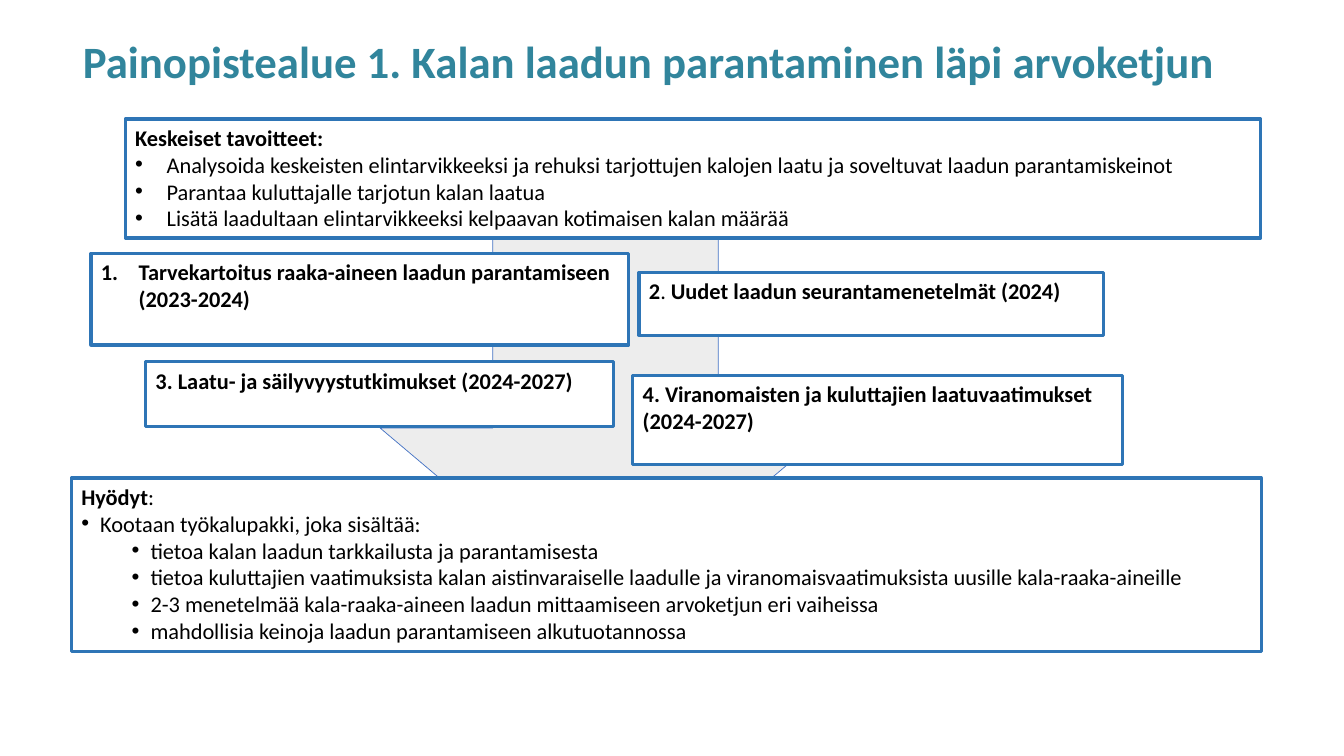
from lxml.etree import SubElement
from pptx import Presentation
from pptx.dml.color import RGBColor
from pptx.enum.shapes import MSO_SHAPE
from pptx.enum.text import MSO_ANCHOR, MSO_AUTO_SIZE, PP_ALIGN
from pptx.oxml.ns import qn
from pptx.util import Pt

TITLE = "Painopistealue 1. Kalan laadun parantaminen läpi arvoketjun"
FONT = "Calibri"
TEAL, BLUE, ARROW_BLUE = "31859C", "2E75B6", "4472C4"
GREY, WHITE, BLACK = "EDEDED", "FFFFFF", "000000"

# Paragraph style: (list marker, left indent)(hanging indent)
PLAIN = (None, 0, 0)
NUMBER = ("1.", 27, 27)
GOAL = ("•", 22.5, 22.5)
BENEFIT = ("•", 13.5, 13.5)
TOOL = ("•", 49.5, 13.5)

# Box: (left, top, width, height), paragraphs of (style, [(text, bold), ...])
BOXES = [
    ((65, 181, 384, 65.5), [
        (NUMBER, [("Tarvekartoitus raaka-aineen laadun parantamiseen (2023-2024)", True)]),
    ]),
    ((456.5, 194.5, 332, 45), [
        (PLAIN, [("2", True), (". ", False),
                 ("Uudet laadun seurantamenetelmät (2024)", True)]),
    ]),
    ((104, 258.5, 334.5, 46), [
        (PLAIN, [("3. Laatu- ja säilyvyystutkimukset (2024-2027)", True)]),
    ]),
    ((51, 341.5, 850, 124), [
        (PLAIN, [("Hyödyt", True), (":", False)]),
        (BENEFIT, [("Kootaan työkalupakki, joka sisältää:", False)]),
        (TOOL, [("tietoa kalan laadun tarkkailusta ja parantamisesta", False)]),
        (TOOL, [("tietoa kuluttajien vaatimuksista kalan aistinvaraiselle laadulle ja "
                 "viranomaisvaatimuksista uusille kala-raaka-aineille", False)]),
        (TOOL, [("2-3 menetelmää kala-raaka-aineen laadun mittaamiseen arvoketjun "
                 "eri vaiheissa", False)]),
        (TOOL, [("mahdollisia keinoja laadun parantamiseen alkutuotannossa", False)]),
    ]),
    ((89.5, 85, 811, 85), [
        (PLAIN, [("Keskeiset tavoitteet:", True)]),
        (GOAL, [("Analysoida keskeisten elintarvikkeeksi ja rehuksi tarjottujen kalojen "
                 "laatu ja soveltuvat laadun parantamiskeinot", False)]),
        (GOAL, [("Parantaa kuluttajalle tarjotun kalan laatua", False)]),
        (GOAL, [("Lisätä laadultaan elintarvikkeeksi kelpaavan kotimaisen kalan määrää", False)]),
    ]),
    ((452, 268, 350, 64), [
        (PLAIN, [("4. Viranomaisten ja kuluttajien laatuvaatimukset (2024-2027)", True)]),
    ]),
]
ARROW = (271.5, 170, 322, 271.5)


def color(hex_string):
    return RGBColor.from_string(hex_string)


def add_shape(slide, kind, place, fill, line, line_width):
    shape = slide.shapes.add_shape(kind, *map(Pt, place))
    shape.shadow.inherit = False
    shape.fill.solid()
    shape.fill.fore_color.rgb = color(fill)
    shape.line.color.rgb = color(line)
    shape.line.width = Pt(line_width)
    return shape


def set_marker(paragraph, marker, left, hanging):
    properties = paragraph._p.get_or_add_pPr()
    properties.set("marL", str(Pt(left)))
    properties.set("indent", str(-Pt(hanging)))
    if marker == "1.":
        SubElement(properties, qn("a:buAutoNum"), type="arabicPeriod")
    else:
        SubElement(properties, qn("a:buFont"), typeface="Arial")
        SubElement(properties, qn("a:buChar"), char=marker)


def add_box(slide, place, paragraphs):
    box = add_shape(slide, MSO_SHAPE.RECTANGLE, place, WHITE, BLUE, 2.25)
    frame = box.text_frame
    frame.word_wrap = True
    frame.auto_size = MSO_AUTO_SIZE.NONE
    frame.vertical_anchor = MSO_ANCHOR.TOP
    for index, (style, runs) in enumerate(paragraphs):
        paragraph = frame.add_paragraph() if index else frame.paragraphs[0]
        paragraph.alignment = PP_ALIGN.LEFT
        if style != PLAIN:
            set_marker(paragraph, *style)
        paragraph.font.name = FONT
        paragraph.font.size = Pt(16)
        paragraph.font.color.rgb = color(BLACK)
        for text, bold in runs:
            run = paragraph.add_run()
            run.text = text
            run.font.bold = bold


def add_title(slide):
    title = slide.shapes.title
    title.left, title.top, title.width, title.height = map(Pt, (52, 12, 869, 68))
    frame = title.text_frame
    frame.text = TITLE
    frame.word_wrap = True
    frame.auto_size = MSO_AUTO_SIZE.NONE
    frame.vertical_anchor = MSO_ANCHOR.MIDDLE
    paragraph = frame.paragraphs[0]
    paragraph.alignment = PP_ALIGN.LEFT
    paragraph.line_spacing = 0.9
    paragraph.font.name = FONT
    paragraph.font.size = Pt(32)
    paragraph.font.bold = True
    paragraph.font.color.rgb = color(TEAL)


def main():
    presentation = Presentation()
    presentation.slide_width, presentation.slide_height = Pt(960), Pt(540)
    slide = presentation.slides.add_slide(presentation.slide_layouts[5])
    add_title(slide)
    add_shape(slide, MSO_SHAPE.DOWN_ARROW, ARROW, GREY, ARROW_BLUE, 0.5)
    for place, paragraphs in BOXES:
        add_box(slide, place, paragraphs)
    presentation.save("out.pptx")


if __name__ == "__main__":
    main()
